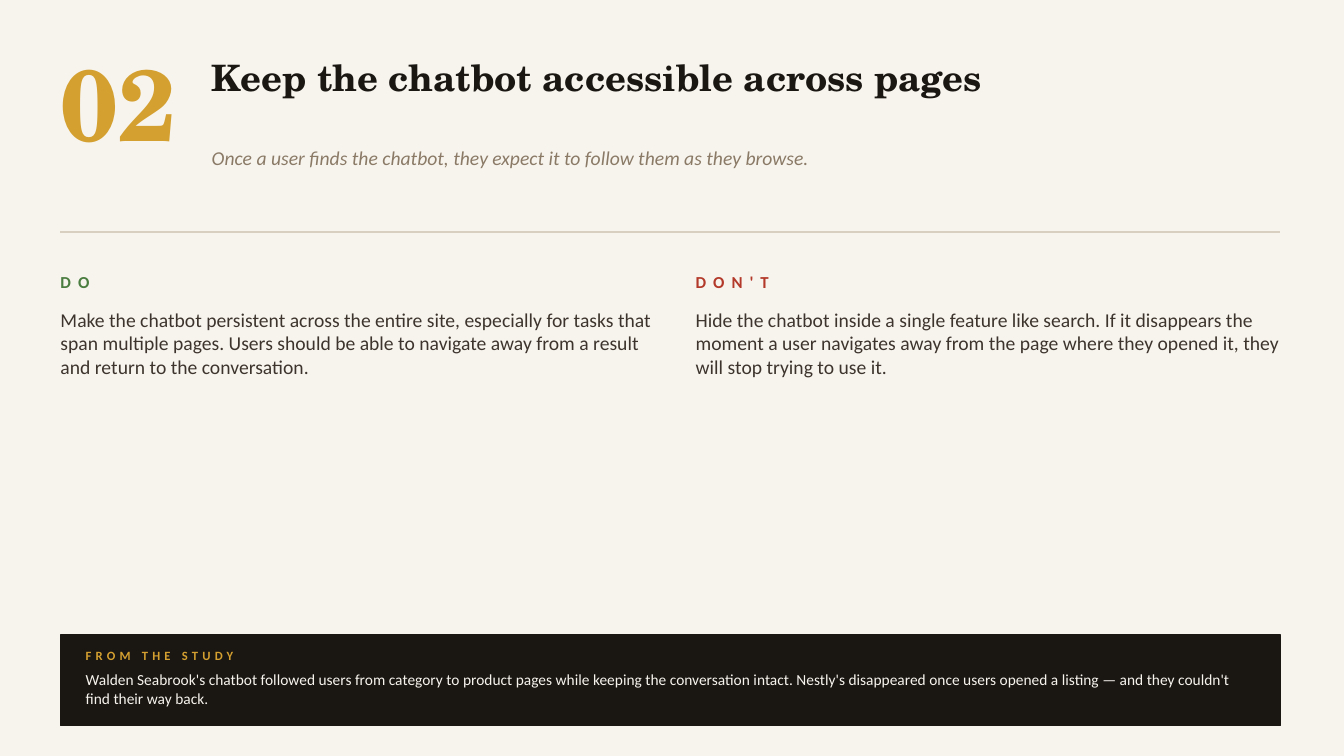
import dataclasses

import lxml.etree
import pptx
import pptx.dml.color
import pptx.enum.shapes
import pptx.enum.text
import pptx.oxml.ns
import pptx.util

PX = 9144  # EMU in one px, at 100 px to the inch
COMPARISON_LAYOUT = 4
Anchor = pptx.enum.text.MSO_ANCHOR


@dataclasses.dataclass(frozen=True)
class Theme:
    # Fonts
    serif: str = "TeX Gyre Schola"
    sans: str = "Calibri"
    # Colours
    paper: str = "F7F4EE"
    ink: str = "1A1612"
    gold: str = "D4A030"
    muted: str = "8A7A66"
    rule: str = "D8CFC0"
    green: str = "4A7D3F"
    red: str = "B33A2A"
    prose: str = "3D352D"
    # Type sizes
    number: int = 72
    title: int = 26
    body: int = 14
    label: int = 12
    note: int = 11
    tag: int = 9


def color(code):
    return pptx.dml.color.RGBColor.from_string(code)


def add_drawing_element(parent, name):
    return lxml.etree.SubElement(parent, pptx.oxml.ns.qn(name))


def write(box, text, *, size, ink, font, bold=False, italic=False,
          tracking=0, after=0, anchor=Anchor.TOP):
    """Fill a box with one formatted paragraph; tracking is in points."""
    frame = box.text_frame
    frame.word_wrap = True
    frame.auto_size = pptx.enum.text.MSO_AUTO_SIZE.NONE
    frame.vertical_anchor = anchor
    frame.margin_left = frame.margin_top = 0
    frame.margin_right = frame.margin_bottom = 0

    para = frame.paragraphs[0]
    para.alignment = pptx.enum.text.PP_ALIGN.LEFT
    para.space_before = pptx.util.Pt(0)
    para.space_after = pptx.util.Pt(after)
    settings = para._p.get_or_add_pPr()
    settings.set("marL", "0")
    settings.set("indent", "0")
    add_drawing_element(settings, "a:buNone")

    span = para.add_run()
    span.text = text
    span.font.name = font
    span.font.size = pptx.util.Pt(size)
    span.font.bold = bold
    span.font.italic = italic
    span.font.color.rgb = color(ink)
    if tracking:
        span._r.get_or_add_rPr().set("spc", str(tracking * 100))


class Page:
    def __init__(self, deck, theme):
        self.theme = theme
        self.slide = deck.slides.add_slide(deck.slide_layouts[COMPARISON_LAYOUT])
        self.slide.background.fill.solid()
        self.slide.background.fill.fore_color.rgb = color(theme.paper)

    def placeholder(self, index, text, left, top, width, height, **style):
        box = self.slide.placeholders[index]
        box.left, box.top = left * PX, top * PX
        box.width, box.height = width * PX, height * PX
        write(box, text, **style)

    def text(self, text, left, top, width, height, **style):
        box = self.slide.shapes.add_textbox(
            left * PX, top * PX, width * PX, height * PX)
        write(box, text, **style)

    def rule(self, left, right, top):
        line = self.slide.shapes.add_connector(
            pptx.enum.shapes.MSO_CONNECTOR.STRAIGHT,
            left * PX, top * PX, right * PX, top * PX)
        line.line.color.rgb = color(self.theme.rule)
        line.line.width = pptx.util.Pt(1)
        add_drawing_element(line._element.spPr, "a:effectLst")

    def band(self, left, top, width, height):
        band = self.slide.shapes.add_shape(
            pptx.enum.shapes.MSO_SHAPE.RECTANGLE,
            left * PX, top * PX, width * PX, height * PX)
        band.shadow.inherit = False
        band.fill.solid()
        band.fill.fore_color.rgb = color(self.theme.ink)
        band.line.color.rgb = color(self.theme.ink)
        band.line.width = pptx.util.Pt(1)

    def advice(self, first_index, left, label, ink, text):
        """A tracked label above its paragraph."""
        theme = self.theme
        self.placeholder(first_index, label, left, 260, 600, 40,
                         size=theme.label, ink=ink, font=theme.sans,
                         bold=True, tracking=5, anchor=Anchor.MIDDLE)
        self.placeholder(first_index + 1, text, left, 305, 600, 310,
                         size=theme.body, ink=theme.prose, font=theme.sans,
                         after=8)


def main():
    deck = pptx.Presentation()
    deck.slide_width, deck.slide_height = 1333 * PX, 750 * PX
    theme = Theme()
    page = Page(deck, theme)
    margin, content_width = 60, 1210

    # Header
    page.text("02", margin, 40, 150, 120, size=theme.number,
              ink=theme.gold, font=theme.serif, bold=True)
    page.placeholder(0, "Keep the chatbot accessible across pages",
                     210, 55, 1060, 110, size=theme.title,
                     ink=theme.ink, font=theme.serif, bold=True)
    page.text("Once a user finds the chatbot, they expect it to follow them "
              "as they browse.", 210, 145, 1060, 60, size=theme.body,
              ink=theme.muted, font=theme.sans, italic=True)
    page.rule(margin, margin + content_width, 230)

    # Do and don't columns
    page.advice(1, margin, "DO", theme.green,
                "Make the chatbot persistent across the entire site, "
                "especially for tasks that span multiple pages. Users should "
                "be able to navigate away from a result and return to the "
                "conversation.")
    page.advice(3, margin + 630, "DON'T", theme.red,
                "Hide the chatbot inside a single feature like search. If it "
                "disappears the moment a user navigates away from the page "
                "where they opened it, they will stop trying to use it.")

    # Study evidence
    page.band(margin, 630, content_width, 90)
    page.text("FROM THE STUDY", margin + 25, 638, 250, 25, size=theme.tag,
              ink=theme.gold, font=theme.sans, bold=True, tracking=3,
              anchor=Anchor.MIDDLE)
    page.text("Walden Seabrook's chatbot followed users from category to "
              "product pages while keeping the conversation intact. Nestly's "
              "disappeared once users opened a listing — and they couldn't "
              "find their way back.", margin + 25, 665, 1160, 50,
              size=theme.note, ink=theme.paper, font=theme.sans)

    deck.save("out.pptx")


if __name__ == "__main__":
    main()
